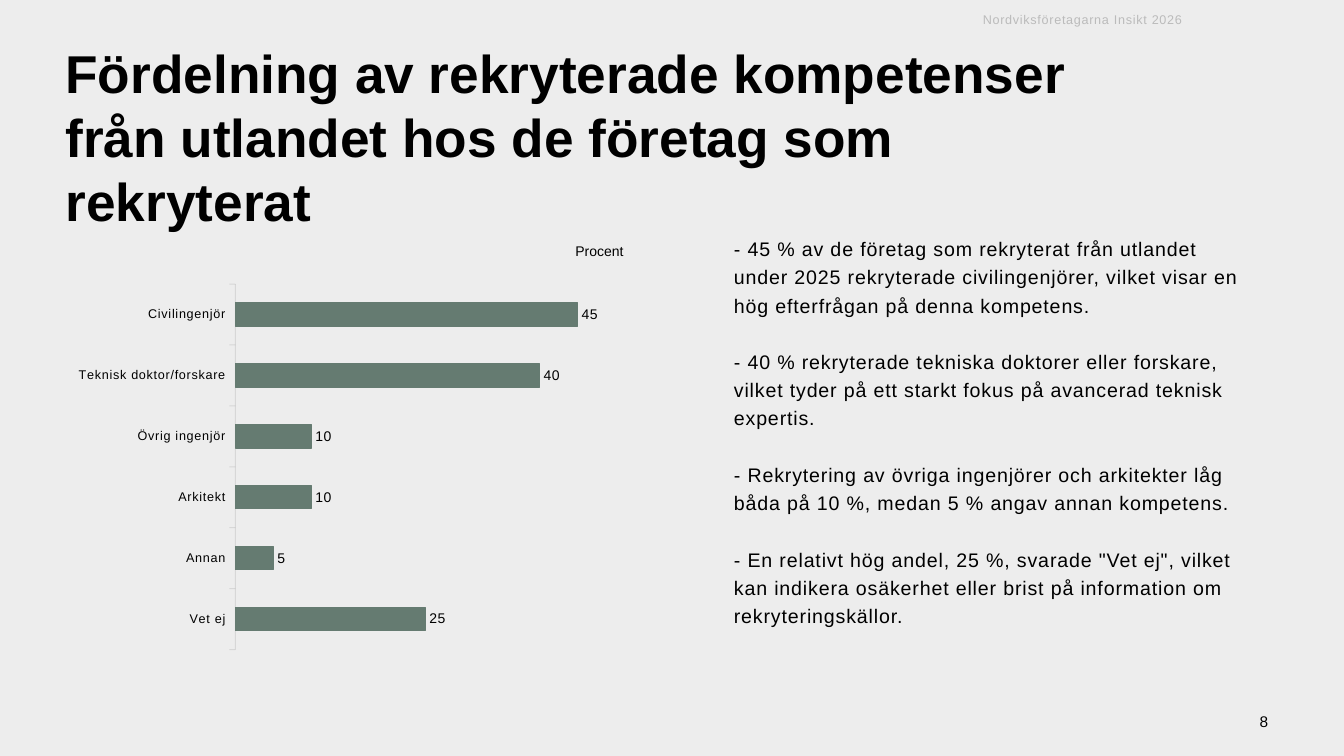
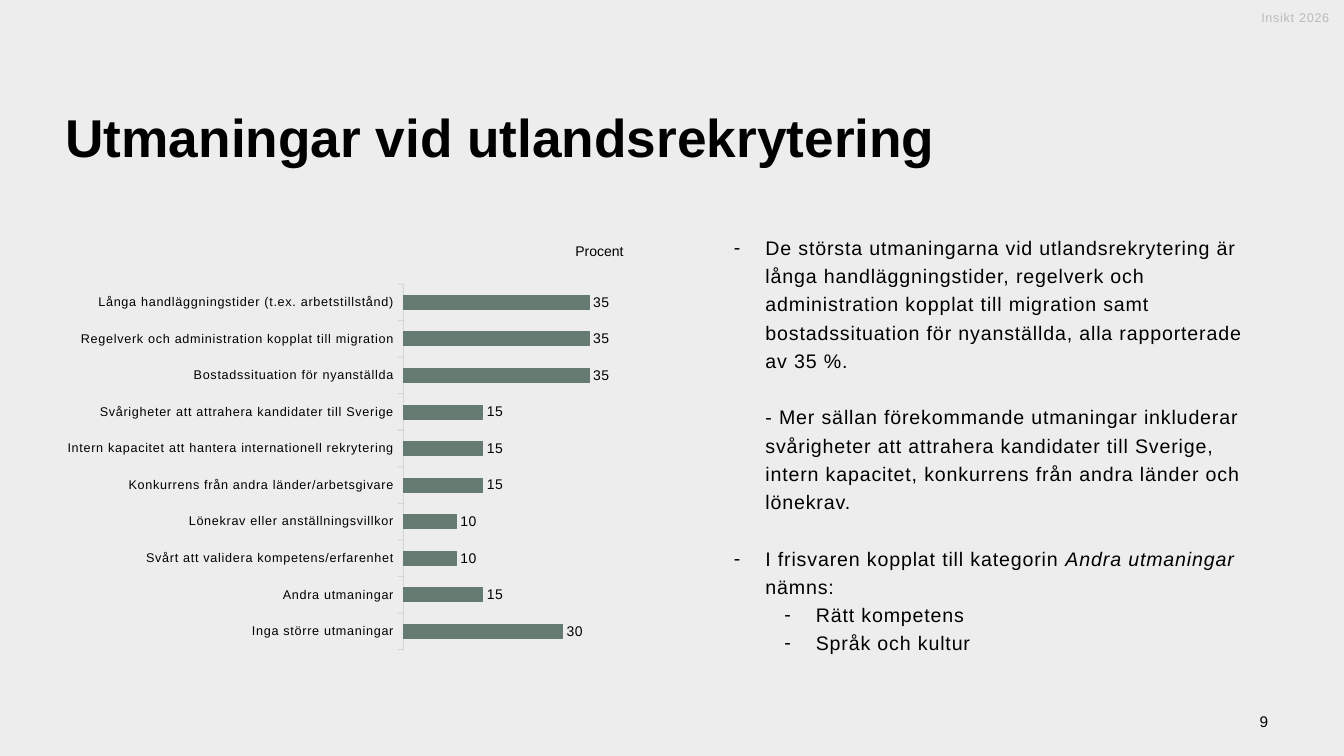
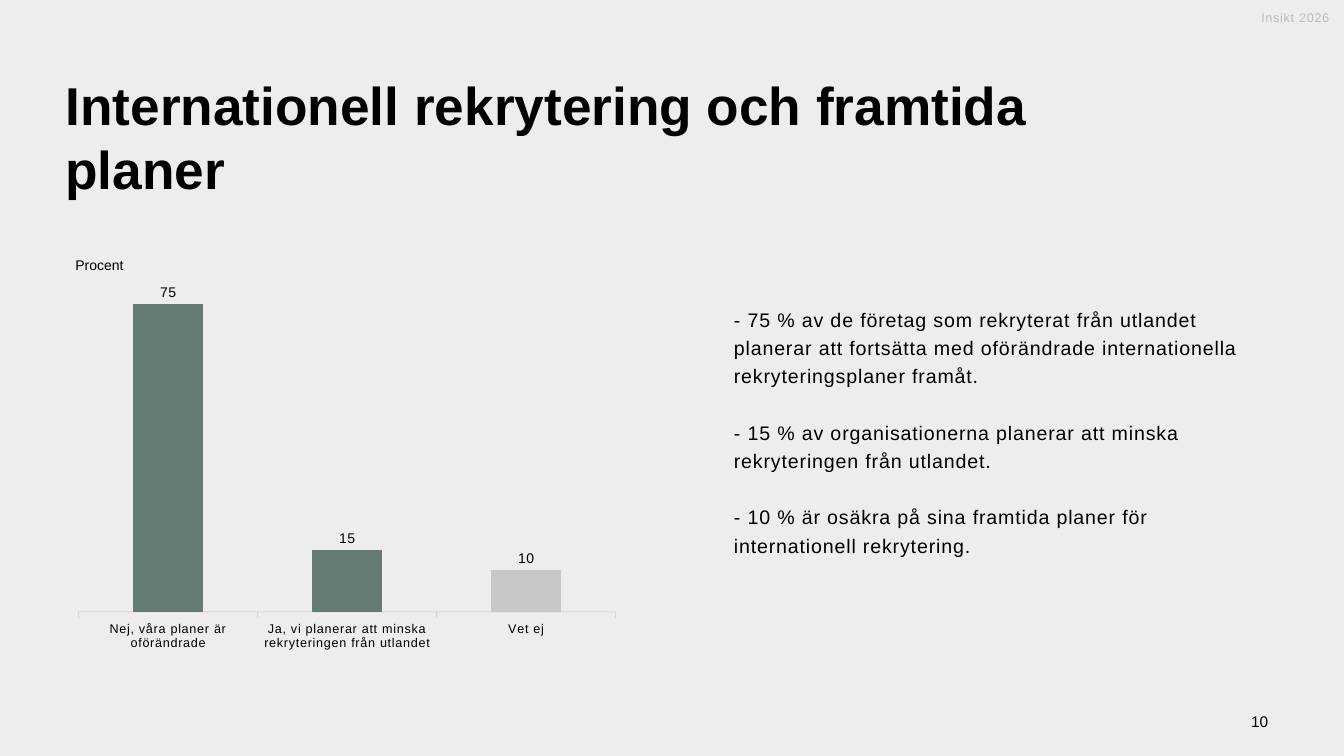
from dataclasses import dataclass

from lxml import etree
from pptx import Presentation
from pptx.chart.data import CategoryChartData
from pptx.dml.color import RGBColor
from pptx.enum.chart import XL_CHART_TYPE, XL_LABEL_POSITION, XL_TICK_LABEL_POSITION, XL_TICK_MARK
from pptx.enum.text import MSO_ANCHOR, MSO_AUTO_SIZE, PP_ALIGN
from pptx.oxml.ns import qn
from pptx.util import Pt

BAR, COLUMN = XL_CHART_TYPE.BAR_CLUSTERED, XL_CHART_TYPE.COLUMN_CLUSTERED
OUTSIDE_END = XL_LABEL_POSITION.OUTSIDE_END
LOW = XL_TICK_LABEL_POSITION.LOW
TICK_OUT, TICK_NONE = XL_TICK_MARK.OUTSIDE, XL_TICK_MARK.NONE
TOP, MIDDLE = MSO_ANCHOR.TOP, MSO_ANCHOR.MIDDLE
LEFT, CENTER, RIGHT = PP_ALIGN.LEFT, PP_ALIGN.CENTER, PP_ALIGN.RIGHT
NO_FIT = MSO_AUTO_SIZE.NONE


@dataclass(frozen=True)
class Theme:
    font: str = "Arial"
    background: RGBColor = RGBColor(0xED, 0xED, 0xED)
    ink: RGBColor = RGBColor(0, 0, 0)
    muted: RGBColor = RGBColor(0xBB, 0xBB, 0xBB)
    bar: RGBColor = RGBColor(0x65, 0x7B, 0x71)
    unsure: RGBColor = RGBColor(0xC7, 0xC7, 0xC7)
    axis: RGBColor = RGBColor(0x7F, 0x7F, 0x7F)
    title_size: float = 38
    body_size: float = 14
    number_size: float = 11
    chart_size: float = 10
    small_size: float = 9
    body_leading: float = 1.2
    body_gap: float = 20.2


T = Theme()
TITLE_BOX = (46.8, 42.5, 738.7, 103)
CHART_BOX = (48.2, 169.9, 399.6, 300.2)
BODY_BOX = (524.2, 133.2, 370.1, 347.8)
TALL_BODY_BOX = (524.2, 133.2, 370.1, 366.4)
NUMBER_BOX = (871.2, 496.8, 41.8, 36.7)
UNIT_RIGHT, UNIT_LEFT = (403.9, 169.9), (46.8, 180)

PLAIN = {"margin": 0, "hang": 0, "bullet": None, "level": 0, "gap": T.body_gap}
DASH = {**PLAIN, "margin": 22.5, "hang": 22.5, "bullet": "-"}
CONTINUED = {**PLAIN, "margin": 22.5}
SUB = {**DASH, "margin": 58.5, "level": 1, "gap": 0}


def apply(obj, formats):
    for name, value in formats.items():
        setattr(obj, name, value)


def style_font(font, size, color=T.ink, **extra):
    apply(font, {"name": T.font, "size": Pt(size), **extra})
    font.color.rgb = color


def place(shape, box):
    apply(shape, dict(zip(("left", "top", "width", "height"), map(Pt, box))))


def setup_frame(tf, anchor, insets):
    sides = ("margin_left", "margin_top", "margin_right", "margin_bottom")
    apply(tf, {"word_wrap": True, "auto_size": NO_FIT, "vertical_anchor": anchor,
               **dict(zip(sides, map(Pt, insets)))})


def add_run(p, text, size, color=T.ink, spacing=0, **extra):
    r = p.add_run()
    r.text = text
    style_font(r.font, size, color, **extra)
    if spacing:
        r.font._element.set("spc", str(spacing))


def add_label(s, text, box, size, color=T.ink, align=LEFT, anchor=TOP,
              insets=(7.2, 3.6, 7.2, 3.6), spacing=0):
    tf = s.shapes.add_textbox(*map(Pt, box)).text_frame
    setup_frame(tf, anchor, insets)
    p = tf.paragraphs[0]
    p.alignment = align
    add_run(p, text, size, color, spacing)


def fill_title(s, text):
    sp = s.shapes.title
    place(sp, TITLE_BOX)
    setup_frame(sp.text_frame, MIDDLE, (0, 6.5, 6.5, 0))
    p = sp.text_frame.paragraphs[0]
    p.alignment = LEFT
    add_run(p, text, T.title_size, bold=True)


def format_paragraph(p, kind, first):
    pPr = p._p.get_or_add_pPr()
    pPr.set("marL", str(Pt(kind["margin"])))
    pPr.set("indent", str(-Pt(kind["hang"])))
    if kind["bullet"]:
        etree.SubElement(pPr, qn("a:buChar")).set("char", kind["bullet"])
    else:
        etree.SubElement(pPr, qn("a:buNone"))
    apply(p, {"level": kind["level"], "alignment": LEFT, "line_spacing": T.body_leading,
              "space_before": Pt(0 if first else kind["gap"]), "space_after": Pt(0)})


def fill_body(s, paragraphs, box):
    sp = s.placeholders[1]
    place(sp, box)
    tf = sp.text_frame
    setup_frame(tf, MIDDLE, (0, 0, 0, 0))
    for i, (kind, *parts) in enumerate(paragraphs):
        p = tf.add_paragraph() if i else tf.paragraphs[0]
        format_paragraph(p, kind, i == 0)
        for j, text in enumerate(parts):
            add_run(p, text, T.body_size, spacing=60, italic=j % 2 == 1)


def set_plot_area(chart, x, y, w, h):
    area = chart.element.find(".//" + qn("c:plotArea"))
    layout = area.find(qn("c:layout"))
    if layout is None:
        layout = etree.Element(qn("c:layout"))
        area.insert(0, layout)
    manual = etree.SubElement(layout, qn("c:manualLayout"))
    values = {"layoutTarget": "inner", "xMode": "edge", "yMode": "edge",
              "x": x, "y": y, "w": w, "h": h}
    for tag, value in values.items():
        etree.SubElement(manual, qn("c:" + tag)).set("val", str(value))


def paint(fmt, color):
    fmt.fill.solid()
    fmt.fill.fore_color.rgb = color
    fmt.line.color.rgb = color
    fmt.line.width = Pt(0.75)


def add_percent_chart(s, kind, data, maximum, plot, grey_points=()):
    cd = CategoryChartData()
    cd.categories = list(data)
    cd.add_series("Series 1", list(data.values()))
    chart = s.shapes.add_chart(kind, *map(Pt, CHART_BOX), cd).chart
    apply(chart, {"has_legend": False, "has_title": False})
    style_font(chart.font, T.chart_size)

    cat = chart.category_axis
    apply(cat, {"tick_label_position": LOW, "major_tick_mark": TICK_OUT,
                "minor_tick_mark": TICK_NONE, "has_major_gridlines": False,
                "reverse_order": kind == BAR})
    style_font(cat.tick_labels.font, T.small_size)
    cat.format.line.color.rgb = T.axis
    cat.format.line.width = Pt(0.75)
    line = chart.element.find(".//" + qn("c:catAx")).find(qn("c:spPr"))
    for color in line.iter(qn("a:srgbClr")):
        etree.SubElement(color, qn("a:alpha")).set("val", "20000")
    apply(chart.value_axis, {"visible": False, "has_major_gridlines": False,
                             "minimum_scale": 0, "maximum_scale": maximum})

    bars = chart.plots[0]
    apply(bars, {"gap_width": 162, "overlap": -30, "vary_by_categories": False,
                 "has_data_labels": True})
    apply(bars.data_labels, {"show_value": True, "number_format": "#,##0;#,##0",
                             "number_format_is_linked": False, "position": OUTSIDE_END})
    style_font(bars.data_labels.font, T.chart_size)
    series = bars.series[0]
    paint(series.format, T.bar)
    for i in grey_points:
        paint(series.points[i].format, T.unsure)
    for props in chart.element.iter(qn("a:defRPr")):
        props.set("spc", "50")
    set_plot_area(chart, *plot)


def add_slide(prs, number, header, header_top, header_align, title, body, body_box, unit_at):
    s = prs.slides.add_slide(prs.slide_layouts[1])
    fill_body(s, body, body_box)
    fill_title(s, title)
    add_label(s, header, (589.7, header_top, 370.1, 31.7), T.small_size, T.muted,
              header_align, insets=(7.2, 7.2, 10.2, 7.2), spacing=50)
    add_label(s, str(number), NUMBER_BOX, T.number_size, align=RIGHT, anchor=MIDDLE)
    add_label(s, "Procent", (*unit_at, 87.8, 19.4), T.chart_size)
    return s


def main():
    prs = Presentation()
    prs.slide_width, prs.slide_height = Pt(960), Pt(540)
    fill = prs.slide_master.background.fill
    fill.solid()
    fill.fore_color.rgb = T.background

    s = add_slide(
        prs, 8, "Nordviksföretagarna Insikt 2026", 1.4, CENTER,
        "Fördelning av rekryterade kompetenser från utlandet hos de företag som rekryterat",
        [(PLAIN, "- 45 % av de företag som rekryterat från utlandet under 2025 rekryterade "
                 "civilingenjörer, vilket visar en hög efterfrågan på denna kompetens."),
         (PLAIN, "- 40 % rekryterade tekniska doktorer eller forskare, vilket tyder på ett "
                 "starkt fokus på avancerad teknisk expertis."),
         (PLAIN, "- Rekrytering av övriga ingenjörer och arkitekter låg båda på 10 %, medan "
                 "5 % angav annan kompetens."),
         (PLAIN, "- En relativt hög andel, 25 %, svarade \"Vet ej\", vilket kan indikera "
                 "osäkerhet eller brist på information om rekryteringskällor.")],
        BODY_BOX, UNIT_RIGHT)
    add_percent_chart(s, BAR, {
        "Civilingenjör": 45, "Teknisk doktor/forskare": 40, "Övrig ingenjör": 10,
        "Arkitekt": 10, "Annan": 5, "Vet ej": 25,
    }, 50, (0.3, 0.11, 0.68, 0.87))

    s = add_slide(
        prs, 9, "Insikt 2026", 0, RIGHT, "Utmaningar vid utlandsrekrytering",
        [(DASH, "De största utmaningarna vid utlandsrekrytering är långa handläggningstider, "
                "regelverk och administration kopplat till migration samt bostadssituation "
                "för nyanställda, alla rapporterade av 35 %."),
         (CONTINUED, "- Mer sällan förekommande utmaningar inkluderar svårigheter att "
                     "attrahera kandidater till Sverige, intern kapacitet, konkurrens från "
                     "andra länder och lönekrav."),
         (DASH, "I frisvaren kopplat till kategorin ", "Andra utmaningar ", "nämns:"),
         (SUB, "Rätt kompetens"),
         (SUB, "Språk och kultur")],
        TALL_BODY_BOX, UNIT_RIGHT)
    add_percent_chart(s, BAR, {
        "Långa handläggningstider (t.ex. arbetstillstånd)": 35,
        "Regelverk och administration kopplat till migration": 35,
        "Bostadssituation för nyanställda": 35,
        "Svårigheter att attrahera kandidater till Sverige": 15,
        "Intern kapacitet att hantera internationell rekrytering": 15,
        "Konkurrens från andra länder/arbetsgivare": 15,
        "Lönekrav eller anställningsvillkor": 10,
        "Svårt att validera kompetens/erfarenhet": 10,
        "Andra utmaningar": 15,
        "Inga större utmaningar": 30,
    }, 40, (0.6, 0.11, 0.38, 0.87))

    s = add_slide(
        prs, 10, "Insikt 2026", 0, RIGHT, "Internationell rekrytering och framtida planer",
        [(PLAIN, "- 75 % av de företag som rekryterat från utlandet planerar att fortsätta "
                 "med oförändrade internationella rekryteringsplaner framåt."),
         (PLAIN, "- 15 % av organisationerna planerar att minska rekryteringen från utlandet."),
         (PLAIN, "- 10 % är osäkra på sina framtida planer för internationell rekrytering.")],
        BODY_BOX, UNIT_LEFT)
    add_percent_chart(s, COLUMN, {
        "Nej, våra planer är oförändrade": 75,
        "Ja, vi planerar att minska rekryteringen från utlandet": 15,
        "Vet ej": 10,
    }, 80, (0.02, 0.11, 0.96, 0.78), grey_points=(2,))

    prs.save("out.pptx")


if __name__ == "__main__":
    main()
